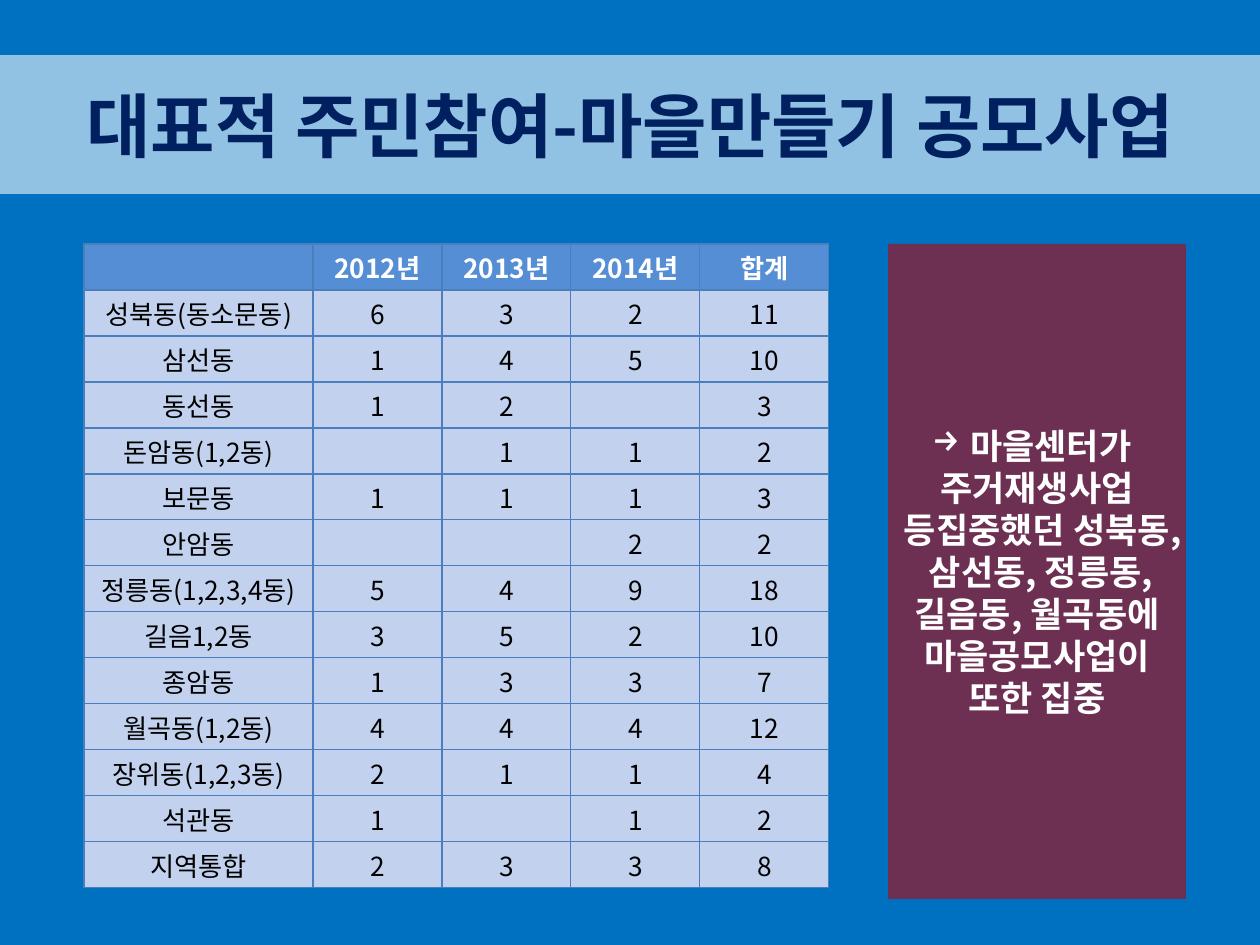
from dataclasses import dataclass

from lxml.etree import SubElement
from pptx import Presentation
from pptx.dml.color import RGBColor
from pptx.enum.shapes import MSO_SHAPE
from pptx.enum.text import MSO_ANCHOR, MSO_AUTO_SIZE, PP_ALIGN
from pptx.oxml.ns import qn
from pptx.util import Emu, Pt

PX = 914400 // 126

TITLE = "대표적 주민참여-마을만들기 공모사업"
HEADER = ("", "2012년", "2013년", "2014년", "합계")
PROJECTS = [
    ("성북동(동소문동)", 6, 3, 2, 11),
    ("삼선동", 1, 4, 5, 10),
    ("동선동", 1, 2, "", 3),
    ("돈암동(1,2동)", "", 1, 1, 2),
    ("보문동", 1, 1, 1, 3),
    ("안암동", "", "", 2, 2),
    ("정릉동(1,2,3,4동)", 5, 4, 9, 18),
    ("길음1,2동", 3, 5, 2, 10),
    ("종암동", 1, 3, 3, 7),
    ("월곡동(1,2동)", 4, 4, 4, 12),
    ("장위동(1,2,3동)", 2, 1, 1, 4),
    ("석관동", 1, "", 1, 2),
    ("지역통합", 2, 3, 3, 8),
]
NOTE = (
    " 마을센터가 ",
    "주거재생사업 등집중했던 성북동, 삼선동, 정릉동, 길음동, 월곡동에 마을공모사업이 또한 집중",
)

TITLE_BOX = (0, 55, 1260, 139)
NOTE_BOX = (888, 244, 298, 655)
TABLE_LEFT, TABLE_TOP = 84, 244
COLUMN_WIDTHS = (229, 129, 129, 129, 129)
ROW_HEIGHT = 46


@dataclass(frozen=True)
class Theme:
    font: str = "Noto Sans CJK KR"
    background: str = "0070C0"
    title: str = "002060"
    band: str = "FFFFFF"
    note: str = "C00000"
    light: str = "FFFFFF"
    dark: str = "000000"
    header: str = "558ED5"
    body: str = "C2D1ED"
    border: str = "4B7EBC"
    panel_opacity: int = 57
    title_size: int = 40
    note_size: int = 20
    table_size: int = 15
    border_width: float = 0.75


THEME = Theme()


def px(*lengths):
    return [Emu(length * PX) for length in lengths]


def paint(fill, color, opacity=100):
    fill.solid()
    fill.fore_color.rgb = RGBColor.from_string(color)
    if opacity < 100:
        color_node = fill._xPr.find(qn("a:solidFill"))[0]
        SubElement(color_node, qn("a:alpha"), val=str(opacity * 1000))


def style(para, size, color, bold=True):
    para.alignment = PP_ALIGN.CENTER
    font = para.font
    font.name, font.size, font.bold = THEME.font, Pt(size), bold
    font.color.rgb = RGBColor.from_string(color)
    # Hangul takes its typeface from a:ea, which must follow a:latin
    east_asian = SubElement(font._element, qn("a:ea"), typeface=THEME.font)
    font._element.find(qn("a:latin")).addnext(east_asian)


def add_bullet(para, character):
    properties = para._p.get_or_add_pPr()
    bullet = SubElement(properties, qn("a:buChar"), char=character)
    properties.find(qn("a:defRPr")).addprevious(bullet)


def add_borders(cell):
    properties = cell._tc.get_or_add_tcPr()
    for position, side in enumerate(("lnL", "lnR", "lnT", "lnB")):
        line = SubElement(properties, qn(f"a:{side}"), w=str(Pt(THEME.border_width)))
        solid = SubElement(line, qn("a:solidFill"))
        SubElement(solid, qn("a:srgbClr"), val=THEME.border)
        properties.insert(position, line)


def fill_title(page):
    title = page.shapes.title
    title.left, title.top, title.width, title.height = px(*TITLE_BOX)
    paint(title.fill, THEME.band, THEME.panel_opacity)
    frame = title.text_frame
    frame.text = TITLE
    frame.auto_size = MSO_AUTO_SIZE.NONE
    frame.vertical_anchor = MSO_ANCHOR.MIDDLE
    style(frame.paragraphs[0], THEME.title_size, THEME.title)


def add_project_table(page):
    rows = [HEADER, *PROJECTS]
    box = px(TABLE_LEFT, TABLE_TOP, sum(COLUMN_WIDTHS), ROW_HEIGHT * len(rows))
    table = page.shapes.add_table(len(rows), len(HEADER), *box).table
    for column, width in zip(table.columns, px(*COLUMN_WIDTHS)):
        column.width = width
    for row_index, values in enumerate(rows):
        table.rows[row_index].height = Emu(ROW_HEIGHT * PX)
        is_header = row_index == 0
        for column_index, value in enumerate(values):
            cell = table.cell(row_index, column_index)
            cell.text = str(value)
            cell.vertical_anchor = MSO_ANCHOR.MIDDLE
            cell.margin_left = cell.margin_right = cell.margin_top = Emu(PX)
            cell.margin_bottom = 0
            paint(cell.fill, THEME.header if is_header else THEME.body)
            add_borders(cell)
            color = THEME.light if is_header else THEME.dark
            style(cell.text_frame.paragraphs[0], THEME.table_size, color, is_header)


def add_note(page):
    note = page.shapes.add_shape(MSO_SHAPE.RECTANGLE, *px(*NOTE_BOX))
    note.shadow.inherit = False
    note.line.fill.background()
    paint(note.fill, THEME.note, THEME.panel_opacity)
    frame = note.text_frame
    frame.word_wrap = True
    frame.vertical_anchor = MSO_ANCHOR.MIDDLE
    frame.text = "\n".join(NOTE)
    for para in frame.paragraphs:
        style(para, THEME.note_size, THEME.light)
    add_bullet(frame.paragraphs[0], "→")


def main():
    deck = Presentation()
    deck.slide_width, deck.slide_height = px(1260, 945)
    page = deck.slides.add_slide(deck.slide_layouts.get_by_name("Title Only"))
    paint(page.background.fill, THEME.background)
    fill_title(page)
    add_project_table(page)
    add_note(page)
    deck.save("out.pptx")


if __name__ == "__main__":
    main()
